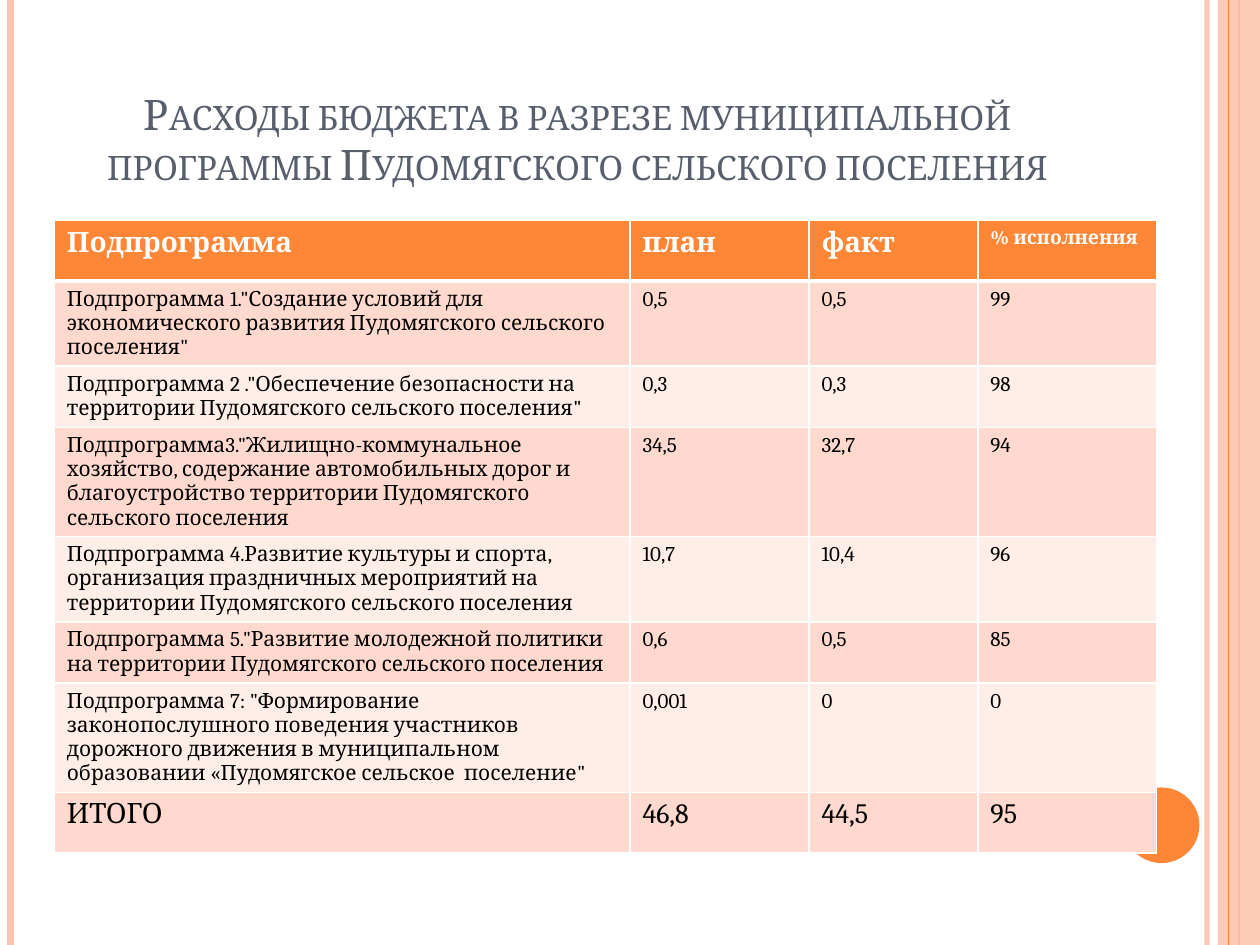
from lxml.etree import SubElement
from pptx import Presentation
from pptx.dml.color import RGBColor
from pptx.enum.shapes import MSO_CONNECTOR as Connector, MSO_SHAPE as Shape
from pptx.enum.text import MSO_ANCHOR as Anchor, PP_ALIGN as Align
from pptx.oxml.ns import qn
from pptx.util import Pt

FONT = "Cambria"
COLORS = {
    "orange": "FE8637", "peach": "FEC3AE", "title": "575F6D",
    "white": "FFFFFF", "black": "000000",
    "odd_row": "FFD9CE", "even_row": "FFEDE8",
}
TITLE = ("Расходы бюджета в разрезе муниципальной программы "
         "Пудомягского сельского поселения")
HEADER = ("Подпрограмма", "план", "факт", "% исполнения")
PROGRAMS = [
    ('Подпрограмма 1."Создание условий для экономического развития '
     'Пудомягского сельского поселения"', "0,5", "0,5", "99"),
    ('Подпрограмма 2 ."Обеспечение безопасности на территории '
     'Пудомягского сельского поселения"', "0,3", "0,3", "98"),
    ('Подпрограмма3."Жилищно-коммунальное хозяйство, содержание '
     'автомобильных дорог и благоустройство территории Пудомягского '
     'сельского поселения', "34,5", "32,7", "94"),
    ('Подпрограмма 4.Развитие культуры и спорта, организация праздничных '
     'мероприятий на территории Пудомягского сельского поселения',
     "10,7", "10,4", "96"),
    ('Подпрограмма 5."Развитие молодежной политики на территории '
     'Пудомягского сельского поселения', "0,6", "0,5", "85"),
    ('Подпрограмма 7: "Формирование законопослушного поведения участников '
     'дорожного движения в муниципальном образовании «Пудомягское '
     'сельское  поселение"', "0,001", "0", "0"),
]
TOTAL = ("ИТОГО", "46,8", "44,5", "95")
COLUMN_WIDTHS = (329, 102.3, 96.5, 102.2)
ROW_HEIGHTS = (34.6, 48.6, 35, 62.4, 48.6, 35, 62.4, 34.6)


def rgb(name):
    """Return the named colour."""
    return RGBColor.from_string(COLORS[name])


def set_alpha(fill, percent):
    """Make a solid fill partly transparent."""
    color = next(fill.iter(qn("a:srgbClr")))
    SubElement(color, qn("a:alpha"), val=str(percent * 1000))


def add_stripe(slide, x, top, height, color, width, alpha=100):
    """Draw a vertical line."""
    stripe = slide.shapes.add_connector(
        Connector.STRAIGHT, Pt(x), Pt(top), Pt(x), Pt(top + height))
    stripe.line.color.rgb = rgb(color)
    stripe.line.width = Pt(width)
    properties = stripe._element.spPr
    SubElement(properties, qn("a:effectLst"))
    if alpha < 100:
        set_alpha(properties, alpha)


def add_solid(slide, kind, left, top, width, height, color):
    """Add a plain filled shape without outline."""
    solid = slide.shapes.add_shape(kind, Pt(left), Pt(top), Pt(width), Pt(height))
    solid.fill.solid()
    solid.fill.fore_color.rgb = rgb(color)
    solid.line.fill.background()
    solid.shadow.inherit = False
    return solid


def add_frame(slide, left, top, width, height):
    """Draw the side stripes and the corner disc."""
    right = left + width
    add_stripe(slide, right - 30.3, top, height, "peach", 3, 93)
    add_stripe(slide, left + 6, top, height, "peach", 4.5)
    add_stripe(slide, right - 12, top, height, "orange", 1.5)
    band = add_solid(slide, Shape.RECTANGLE, right - 24, top, 24, height, "peach")
    set_alpha(band._element.spPr, 87)
    add_stripe(slide, right - 18, top, height, "orange", 0.75)
    add_solid(slide, Shape.OVAL, right - 77.8, top + height - 90, 43.2, 43.2, "orange")


def place_title(slide, left, top, width, height):
    """Fill and format the title placeholder in small capitals."""
    title = slide.shapes.title
    title.left, title.top, title.width, title.height = map(
        Pt, (left, top, width, height))
    title.text_frame.vertical_anchor = Anchor.BOTTOM
    heading = title.text_frame.paragraphs[0]
    heading.alignment = Align.CENTER
    words = heading.add_run()
    words.text = TITLE
    words.font.name = FONT
    words.font.size = Pt(24)
    words.font.color.rgb = rgb("title")
    words.font._element.set("cap", "small")


def add_borders(cell, bottom):
    """Give a cell white borders."""
    for side, width in (("L", 1), ("R", 1), ("T", 1), ("B", bottom)):
        border = SubElement(cell._tc.get_or_add_tcPr(), qn(f"a:ln{side}"),
                            w=str(Pt(width)))
        fill = SubElement(border, qn("a:solidFill"))
        SubElement(fill, qn("a:srgbClr"), val=COLORS["white"])


def fill_cell(cell, text, size, color, fill, bold=False, bottom=1):
    """Write and format one table cell."""
    cell.text = text
    font = cell.text_frame.paragraphs[0].font
    font.name, font.size, font.bold = FONT, Pt(size), bold
    font.color.rgb = rgb(color)
    add_borders(cell, bottom)
    cell.fill.solid()
    cell.fill.fore_color.rgb = rgb(fill)


def add_budget(slide, left, top):
    """Add the table of spending by subprogram."""
    rows = [HEADER, *PROGRAMS, TOTAL]
    budget = slide.shapes.add_table(
        len(rows), len(HEADER), Pt(left), Pt(top),
        Pt(sum(COLUMN_WIDTHS)), Pt(sum(ROW_HEIGHTS))).table
    for column, width in zip(budget.columns, COLUMN_WIDTHS):
        column.width = Pt(width)
    for r, (row, height) in enumerate(zip(rows, ROW_HEIGHTS)):
        budget.rows[r].height = Pt(height)
        for c, text in enumerate(row):
            cell = budget.cell(r, c)
            if row is HEADER:
                size = 11 if c == len(HEADER) - 1 else 16
                fill_cell(cell, text, size, "white", "orange", True, 3)
            else:
                fill_cell(cell, text, 16 if row is TOTAL else 12, "black",
                          "odd_row" if r % 2 else "even_row")


def main():
    """Build and save the slide."""
    deck = Presentation()
    deck.slide_width, deck.slide_height = Pt(720), Pt(540)
    slide = deck.slides.add_slide(deck.slide_layouts[5])
    add_frame(slide, 0, 0, 720, 540)
    place_title(slide, 36, 21.6, 588, 90)
    add_budget(slide, 31, 126)
    deck.save("out.pptx")


if __name__ == "__main__":
    main()
